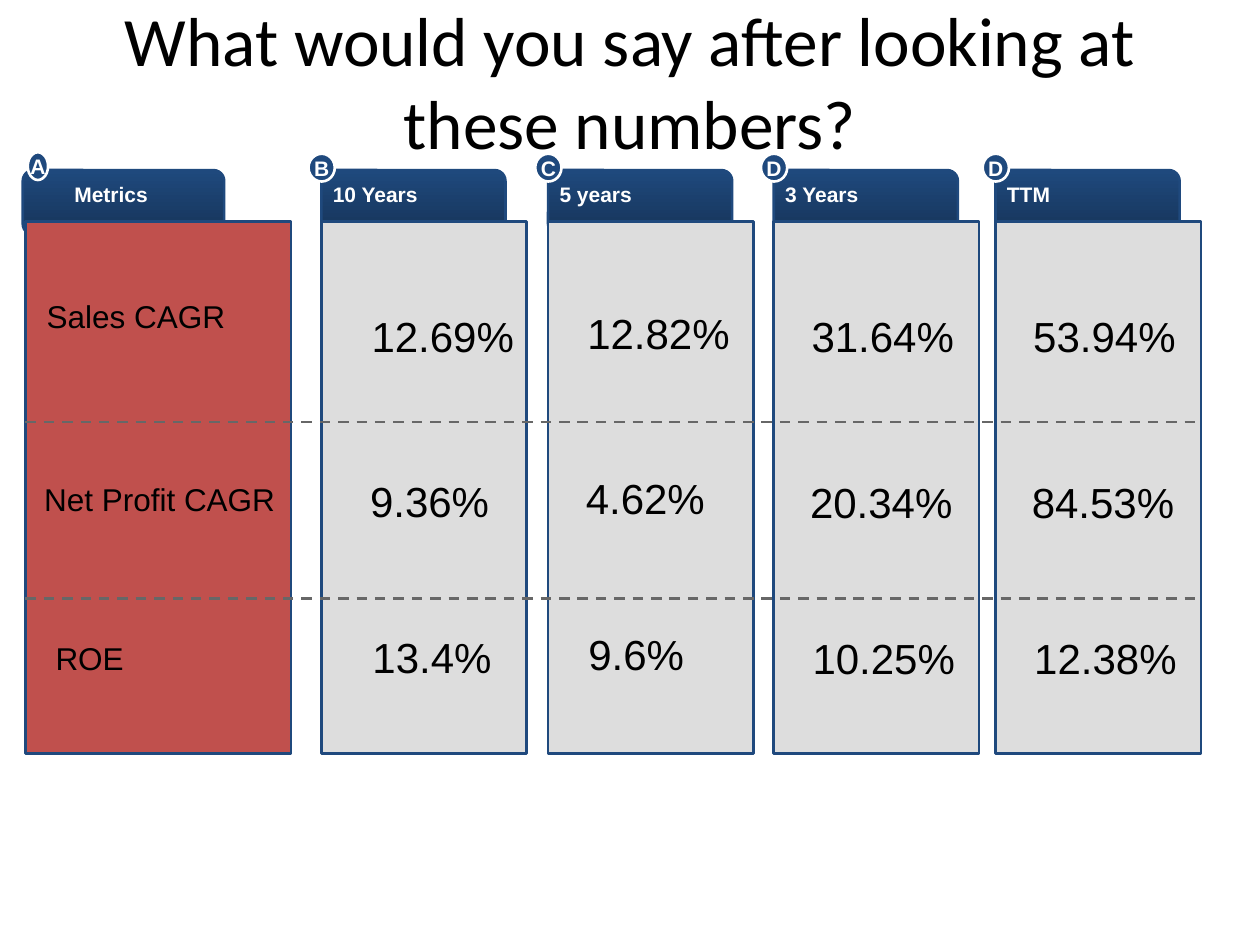
import pptx
import pptx.util
import pptx.dml.color
import pptx.enum.dml
import pptx.enum.shapes
import pptx.enum.text
import pptx.oxml

Cm = pptx.util.Cm
Pt = pptx.util.Pt
Kind = pptx.enum.shapes.MSO_SHAPE
Mid = pptx.enum.text.MSO_ANCHOR.MIDDLE
Low = pptx.enum.text.MSO_ANCHOR.BOTTOM
Top = pptx.enum.text.MSO_ANCHOR.TOP
Left = pptx.enum.text.PP_ALIGN.LEFT
Center = pptx.enum.text.PP_ALIGN.CENTER
Fit = pptx.enum.text.MSO_AUTO_SIZE

HUES = {
    "navy": "1F497D",
    "deep": "163459",
    "red": "C0504D",
    "pale": "DDDDDD",
    "dash": "676767",
    "white": "FFFFFF",
    "black": "000000",
}


def hue(name):
    return pptx.dml.color.RGBColor.from_string(HUES[name])


def apply(item, style):
    for key, value in style.items():
        setattr(item, key, value)


class Deck:
    font = "Arial"
    rule = Pt(1.5)

    def __init__(self):
        self.prs = pptx.Presentation()
        apply(self.prs, {"slide_width": Cm(25.4), "slide_height": Cm(19.05)})
        self.slide = self.prs.slides.add_slide(self.prs.slide_layouts[6])

    def letter(self, shape, text, size, color, bold=False, align=Left,
               anchor=Top, wrap=True, inset=0, fit=Fit.NONE, font=None):
        frame = shape.text_frame
        apply(frame, {
            "word_wrap": wrap, "auto_size": fit, "vertical_anchor": anchor,
            "margin_left": Cm(2 * inset), "margin_right": Cm(2 * inset),
            "margin_top": Cm(inset), "margin_bottom": Cm(inset),
        })
        para = frame.paragraphs[0]
        para.alignment = align
        run = para.add_run()
        run.text = text
        apply(run.font, {"name": font or self.font, "size": Pt(size), "bold": bold})
        run.font.color.rgb = hue(color)

    def text(self, x, y, w, h, text, size, color="black", **style):
        box = self.slide.shapes.add_textbox(Cm(x), Cm(y), Cm(w), Cm(h))
        self.letter(box, text, size, color, **style)

    def shape(self, kind, x, y, w, h, fill, line="navy"):
        shape = self.slide.shapes.add_shape(kind, Cm(x), Cm(y), Cm(w), Cm(h))
        shape.shadow.inherit = False
        shape.fill.solid()
        shape.fill.fore_color.rgb = hue(fill)
        shape.line.color.rgb = hue(line)
        shape.line.width = self.rule
        return shape

    def tab(self, x, w):
        shape = self.shape(Kind.ROUNDED_RECTANGLE, x, 3.43, w, 1.3, "navy")
        shape.fill.gradient()
        shape.fill.gradient_angle = 270
        for stop, place, color in zip(shape.fill.gradient_stops, (0, 1), ("navy", "deep")):
            stop.position = place
            stop.color.rgb = hue(color)

    def label(self, x, text):
        self.text(x, 3.66, 3.28, 0.51, text, 12, "white", bold=True,
                  anchor=Low, fit=Fit.SHAPE_TO_FIT_TEXT)

    def badge(self, x, y, w, text):
        shape = self.shape(Kind.OVAL, x, y, w, 0.56, "navy", "white")
        self.letter(shape, text, 12, "white", bold=True, align=Center,
                    anchor=Mid, wrap=False)

    def body(self, x, w, fill):
        self.shape(Kind.RECTANGLE, x, 4.47, w, 10.72, fill)

    def dash(self, y):
        line = self.slide.shapes.add_connector(
            pptx.enum.shapes.MSO_CONNECTOR.STRAIGHT, Cm(0.51), Cm(y), Cm(24.2), Cm(y))
        line.line.color.rgb = hue("dash")
        apply(line.line, {"width": self.rule,
                          "dash_style": pptx.enum.dml.MSO_LINE.DASH})
        line._element.spPr.append(pptx.oxml.parse_xml(
            '<a:effectLst xmlns:a="http://schemas.openxmlformats.org/drawingml/2006/main"/>'))


PERIODS = [
    ("B", "10 Years", 6.48, 7.49, 6.25, ("12.69%", "9.36%", "13.4%")),
    ("C", "5 years", 11.05, 11.84, 6.2, ("12.82%", "4.62%", "9.6%")),
    ("D", "3 Years", 15.6, 16.36, 6.27, ("31.64%", "20.34%", "10.25%")),
    ("D", "TTM", 20.07, 20.83, 6.27, ("53.94%", "84.53%", "12.38%")),
]
STEPS = [(0, 0), (-0.03, 3.33), (0.02, 6.48)]
METRICS = [
    ("Sales CAGR", 0.94, 5.99, 7.32),
    ("Net Profit CAGR", 0.89, 9.68, 7.32),
    ("ROE", 1.12, 12.88, 3.78),
]


def main():
    deck = Deck()
    deck.text(1.17, 0.46, 23.06, 2.31,
              "What would you say after looking at these numbers?", 39.6,
              align=Center, anchor=Mid, inset=0.13, font="Calibri")

    deck.tab(0.46, 4.06)
    deck.body(0.51, 5.36, "red")
    deck.label(1.5, "Metrics")
    deck.badge(0.56, 3.07, 0.41, "A")

    for mark, name, x, *_ in PERIODS:
        deck.tab(x, 3.71)
        deck.label(x + 0.23, name)
        deck.body(x, 4.14, "pale")
        deck.badge(x - 0.26, 3.1, 0.53, mark)

    for y in (8.51, 12.07):
        deck.dash(y)

    for name, x, y, w in METRICS:
        deck.text(x, y, w, 0.76, name, 18, fit=Fit.SHAPE_TO_FIT_TEXT)
    for *_, x, y, values in PERIODS:
        for value, (dx, dy) in zip(values, STEPS):
            deck.text(x + dx, y + dy, 3.78, 1.02, value, 24, fit=Fit.SHAPE_TO_FIT_TEXT)

    deck.prs.save("out.pptx")


if __name__ == "__main__":
    main()
